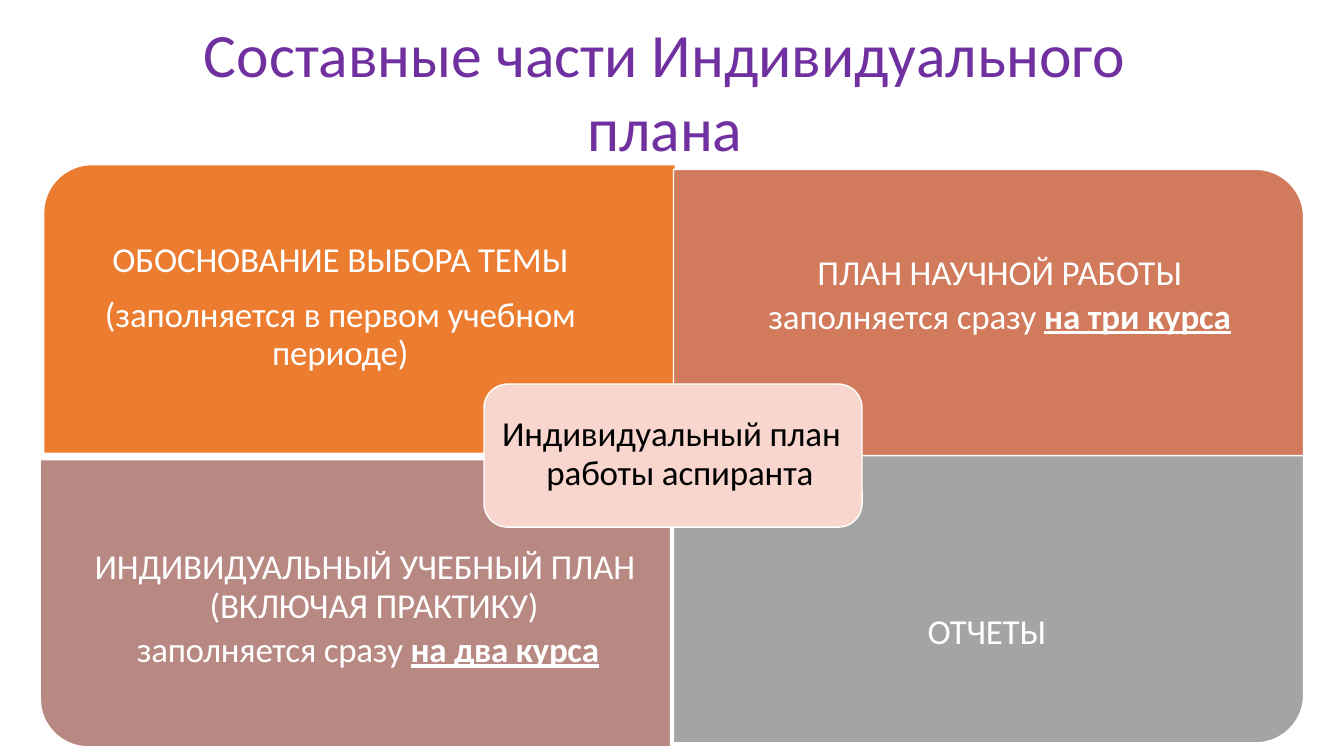
from pptx import Presentation
from pptx.dml.color import RGBColor
from pptx.enum import shapes, text
from pptx.util import Emu, Pt

PX = 9144  # 100 px to the inch
COLORS = {
    "title": "7030A0",
    "topic": "EC7C30",
    "research": "D17A5C",
    "study": "B88982",
    "reports": "A4A4A4",
    "center": "F8D6CD",
    "light": "FFFFFF",
    "dark": "000000",
}
FONT = "Calibri"
CENTER, LEFT = text.PP_ALIGN.CENTER, text.PP_ALIGN.LEFT
LINE = 27.5
QUARTER = (625, 285)


def px(*lengths):
    return [Emu(length * PX) for length in lengths]


def color(name):
    return RGBColor.from_string(COLORS[name])


def write(paragraph, words, size=25, ink="light", strong="", align=CENTER,
          before=0.9, line=None, margin=0, indent=0, spacing=-10):
    """Fill a paragraph; the strong words follow in bold underline."""
    paragraph.alignment = align
    paragraph.space_before = Pt(before)
    if line:
        paragraph.line_spacing = Pt(line)
    properties = paragraph._p.get_or_add_pPr()
    properties.set("marL", str(margin * PX))
    properties.set("indent", str(indent * PX))
    for part, is_strong in ((words, False), (strong, True)):
        if not part:
            continue
        run = paragraph.add_run()
        run.text = part
        run.font.name = FONT
        run.font.size = Pt(size)
        run.font.color.rgb = color(ink)
        if is_strong:
            run.font.bold = run.font.underline = True
        run._r.get_or_add_rPr().set("spc", str(spacing))


def prepare_frame(frame, top):
    frame.word_wrap = True
    frame.auto_size = text.MSO_AUTO_SIZE.NONE
    frame.vertical_anchor = text.MSO_ANCHOR.TOP
    frame.margin_left = frame.margin_right = frame.margin_bottom = 0
    frame.margin_top = Emu(top * PX)


def add_title(slide, words):
    title = slide.shapes.title
    title.left, title.top, title.width, title.height = px(123, 15, 1073, 148)
    prepare_frame(title.text_frame, top=1)
    write(title.text_frame.paragraphs[0], words, size=44, ink="title",
          before=1.1, spacing=0)


def add_label(slide, box, paragraphs, top=1):
    frame = slide.shapes.add_textbox(*px(*box)).text_frame
    prepare_frame(frame, top)
    for index, (words, style) in enumerate(paragraphs):
        paragraph = frame.add_paragraph() if index else frame.paragraphs[0]
        write(paragraph, words, **style)


def add_block(slide, preset, box, fill, outlined=True, flips=()):
    block = slide.shapes.add_shape(preset, *px(*box))
    block.shadow.inherit = False
    block.fill.solid()
    block.fill.fore_color.rgb = color(fill)
    if outlined:
        block.line.color.rgb = color("light")
        block.line.width = Pt(1)
    else:
        block.line.fill.background()
    for flip in flips:
        block._element.spPr.xfrm.set(flip, "1")


def add_quarter(slide, left, top, fill, **style):
    add_block(slide, shapes.MSO_SHAPE.ROUND_1_RECTANGLE,
              (left, top, *QUARTER), fill, **style)


def main():
    deck = Presentation()
    deck.slide_width, deck.slide_height = px(1333, 750)
    slide = deck.slides.add_slide(deck.slide_layouts[5])
    add_title(slide, "Составные части Индивидуального плана")

    add_quarter(slide, 44, 164, "topic", outlined=False, flips=["flipH"])
    add_label(slide, (100, 223, 475, 147), [
        ("ОБОСНОВАНИЕ ВЫБОРА ТЕМЫ", dict(before=9.2)),
        ("(заполняется в первом учебном периоде)",
         dict(before=11.2, line=LINE)),
    ], top=13)

    add_quarter(slide, 668, 168, "research")
    add_label(slide, (750, 248, 483, 87), [
        ("ПЛАН НАУЧНОЙ РАБОТЫ", {}),
        ("заполняется сразу ", dict(strong="на три курса")),
    ])

    add_quarter(slide, 40, 456, "study", flips=["flipH", "flipV"])
    add_label(slide, (93, 539, 544, 172), [
        ("ИНДИВИДУАЛЬНЫЙ УЧЕБНЫЙ ПЛАН (ВКЛЮЧАЯ ПРАКТИКУ)",
         dict(align=LEFT, before=4, line=LINE, margin=115, indent=-114)),
        ("заполняется сразу ",
         dict(strong="на два курса", before=4, line=LINE, spacing=-20)),
    ], top=5)

    add_quarter(slide, 668, 452, "reports", flips=["flipV"])
    add_label(slide, (920, 604, 121, 44), [("ОТЧЕТЫ", dict(align=LEFT))])

    add_block(slide, shapes.MSO_SHAPE.ROUNDED_RECTANGLE,
              (480, 381, 375, 142), "center")
    add_label(slide, (497, 407, 342, 83), [
        ("Индивидуальный план работы аспиранта",
         dict(ink="dark", align=LEFT, before=4, line=LINE,
              margin=45, indent=-44)),
    ], top=5)

    deck.save("out.pptx")


if __name__ == "__main__":
    main()
